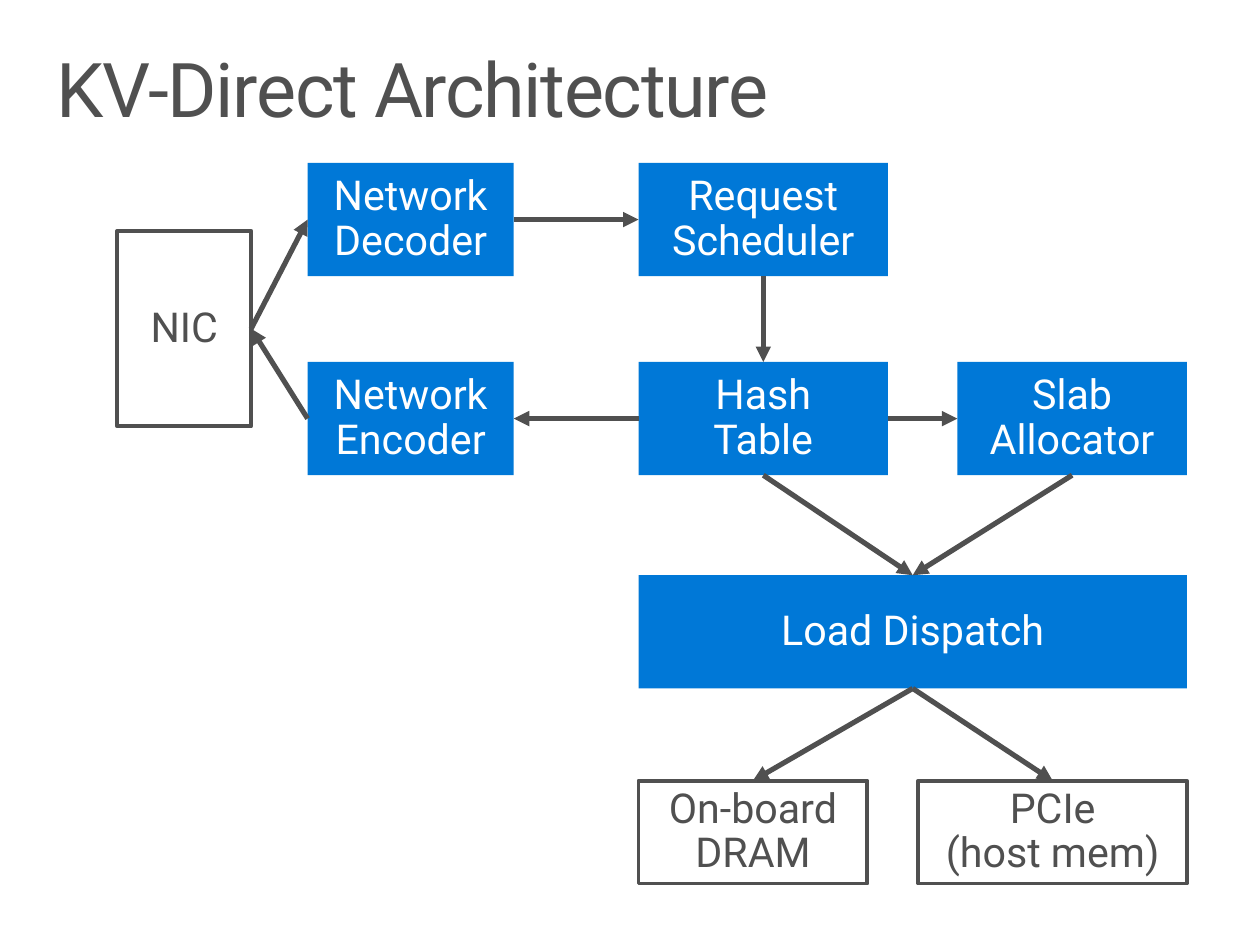
from lxml.etree import SubElement
from pptx import Presentation
from pptx.dml.color import RGBColor
from pptx.enum.shapes import MSO_CONNECTOR, MSO_SHAPE
from pptx.enum.text import MSO_ANCHOR, MSO_AUTO_SIZE, PP_ALIGN
from pptx.oxml.ns import qn
from pptx.util import Pt

BLUE = RGBColor(0x00, 0x78, 0xD7)
GRAY = RGBColor(0x50, 0x50, 0x50)
WHITE = RGBColor(0xFF, 0xFF, 0xFF)

TITLE = "KV-Direct Architecture"
NETWORK, CORE, MEMORY, RIGHT_EDGE = 179.3, 372.2, 558, 691.8
NETWORK_WIDTH, CORE_WIDTH = 120.2, 145.4
REQUEST_ROW, TABLE_ROW, DISPATCH_ROW, STORAGE_ROW = 95, 211, 335.3, 455
STAGE_HEIGHT, STORAGE_HEIGHT = 66, 60
PCIE = 535.3

STAGES = {
    "Network Decoder": (NETWORK, REQUEST_ROW, NETWORK_WIDTH),
    "Request Scheduler": (CORE, REQUEST_ROW, CORE_WIDTH),
    "Hash Table": (CORE, TABLE_ROW, CORE_WIDTH),
    "Network Encoder": (NETWORK, TABLE_ROW, NETWORK_WIDTH),
    "Slab Allocator": (MEMORY, TABLE_ROW, RIGHT_EDGE - MEMORY),
    "Load Dispatch": (CORE, DISPATCH_ROW, RIGHT_EDGE - CORE),
}
DEVICES = {
    "NIC": (68.4, 134.6, 78, 114),
    "On-board DRAM": (CORE, STORAGE_ROW, 133.4, STORAGE_HEIGHT),
    "PCIe\v(host mem)": (PCIE, STORAGE_ROW, RIGHT_EDGE - PCIE, STORAGE_HEIGHT),
}
TOP, LEFT, BOTTOM, RIGHT = range(4)
FLOWS = [
    ("NIC", RIGHT, "Network Decoder", LEFT),
    ("Network Decoder", RIGHT, "Request Scheduler", LEFT),
    ("Request Scheduler", BOTTOM, "Hash Table", TOP),
    ("Hash Table", LEFT, "Network Encoder", RIGHT),
    ("Network Encoder", LEFT, "NIC", RIGHT),
    ("Hash Table", RIGHT, "Slab Allocator", LEFT),
    ("Hash Table", BOTTOM, "Load Dispatch", TOP),
    ("Slab Allocator", BOTTOM, "Load Dispatch", TOP),
    ("Load Dispatch", BOTTOM, "On-board DRAM", TOP),
    ("Load Dispatch", BOTTOM, "PCIe\v(host mem)", TOP),
]

TITLE_FRAME = dict(margin_left=Pt(11.5), margin_right=Pt(11.5),
                   margin_top=Pt(7.2), margin_bottom=Pt(7.2), word_wrap=True,
                   vertical_anchor=MSO_ANCHOR.TOP, auto_size=MSO_AUTO_SIZE.NONE)
BOX_FRAME = dict(margin_left=Pt(14.4), margin_right=Pt(14.4),
                 margin_top=Pt(11.5), margin_bottom=Pt(11.5), word_wrap=True,
                 vertical_anchor=MSO_ANCHOR.MIDDLE)


def apply(target, formats):
    """Set each named format on the target."""
    for name, value in formats.items():
        setattr(target, name, value)


def write(shape, words, frame_formats, size, color, alignment):
    """Put formatted words into a shape."""
    frame = shape.text_frame
    frame.text = words
    apply(frame, frame_formats)
    paragraph = frame.paragraphs[0]
    apply(paragraph, dict(alignment=alignment, line_spacing=0.9))
    for run in paragraph.runs:
        apply(run.font, dict(name="Roboto", size=Pt(size)))
        run.font.color.rgb = color


def add_box(slide, words, place, fill, ink):
    """Draw one labelled box, outlined when it is white."""
    box = slide.shapes.add_shape(MSO_SHAPE.RECTANGLE, *map(Pt, place))
    box.shadow.inherit = False
    box.fill.solid()
    box.fill.fore_color.rgb = fill
    if fill == WHITE:
        box.line.color.rgb = GRAY
        box.line.width = Pt(2.25)
    else:
        box.line.fill.background()
    write(box, words, BOX_FRAME, 24, ink, PP_ALIGN.CENTER)
    return box


def add_flow(slide, source, source_side, target, target_side):
    """Join two boxes with an arrow."""
    flow = slide.shapes.add_connector(MSO_CONNECTOR.STRAIGHT, 0, 0, 0, 0)
    flow.begin_connect(source, source_side)
    flow.end_connect(target, target_side)
    flow.line.color.rgb = GRAY
    flow.line.width = Pt(3)
    SubElement(flow.line._get_or_add_ln(), qn("a:tailEnd"), type="triangle")
    SubElement(flow._element.spPr, qn("a:effectLst"))


def main():
    """Build the architecture slide."""
    deck = Presentation()
    apply(deck, dict(slide_width=Pt(734.4), slide_height=Pt(550.8)))
    slide = deck.slides.add_slide(deck.slide_layouts[5])
    title = slide.shapes.title
    apply(title, dict(left=Pt(21.6), top=Pt(23), width=Pt(691.2), height=Pt(72)))
    write(title, TITLE, TITLE_FRAME, 44, GRAY, PP_ALIGN.LEFT)
    title.text_frame.paragraphs[0].runs[0]._r.get_or_add_rPr().set("spc", "-80")

    boxes = {}
    for words, place in STAGES.items():
        boxes[words] = add_box(slide, words, (*place, STAGE_HEIGHT), BLUE, WHITE)
    for words, place in DEVICES.items():
        boxes[words] = add_box(slide, words, place, WHITE, GRAY)
    for source, source_side, target, target_side in FLOWS:
        add_flow(slide, boxes[source], source_side, boxes[target], target_side)
    deck.save("out.pptx")


if __name__ == "__main__":
    main()
